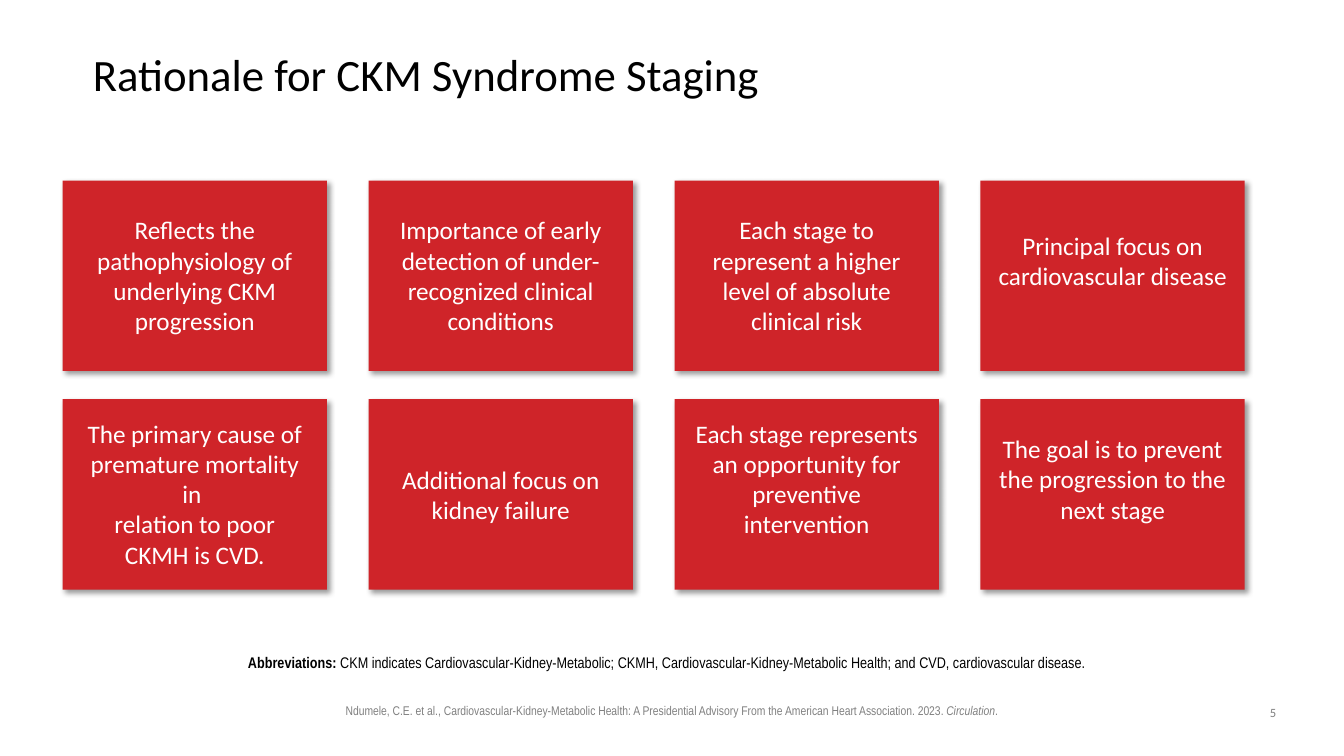
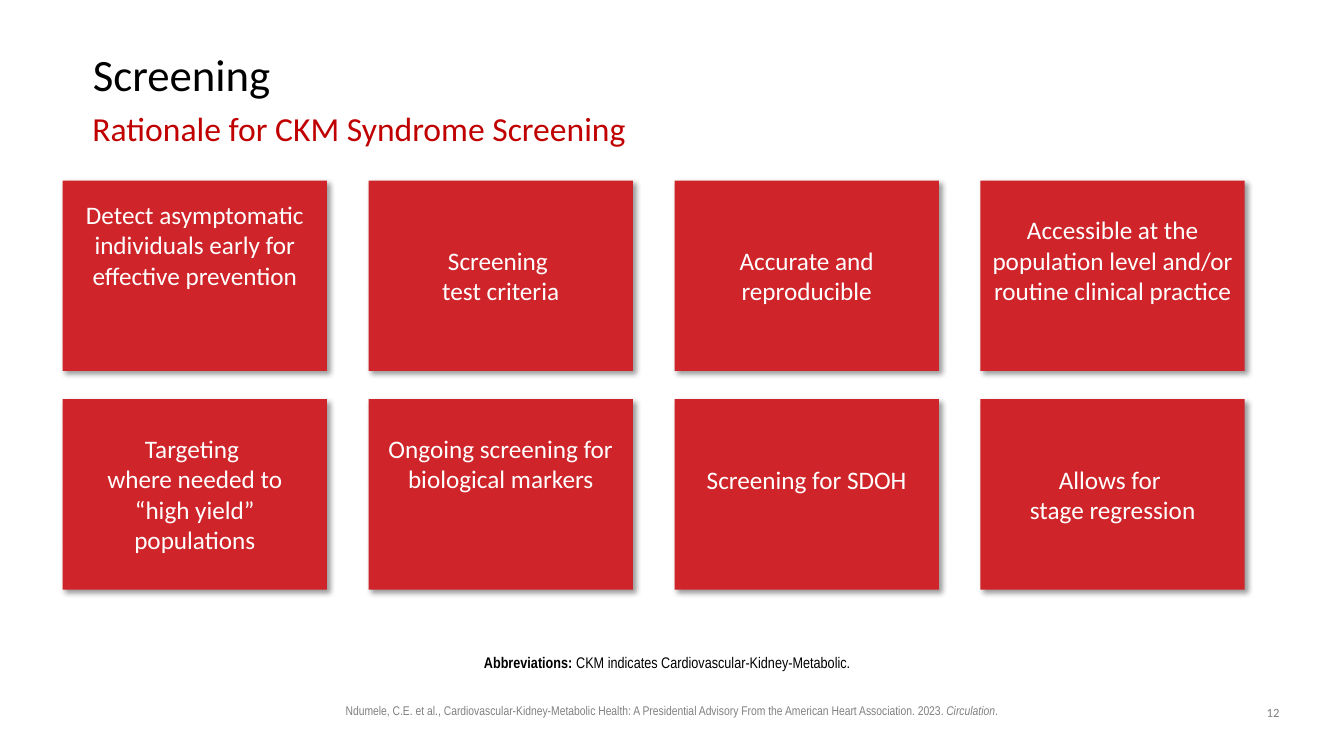
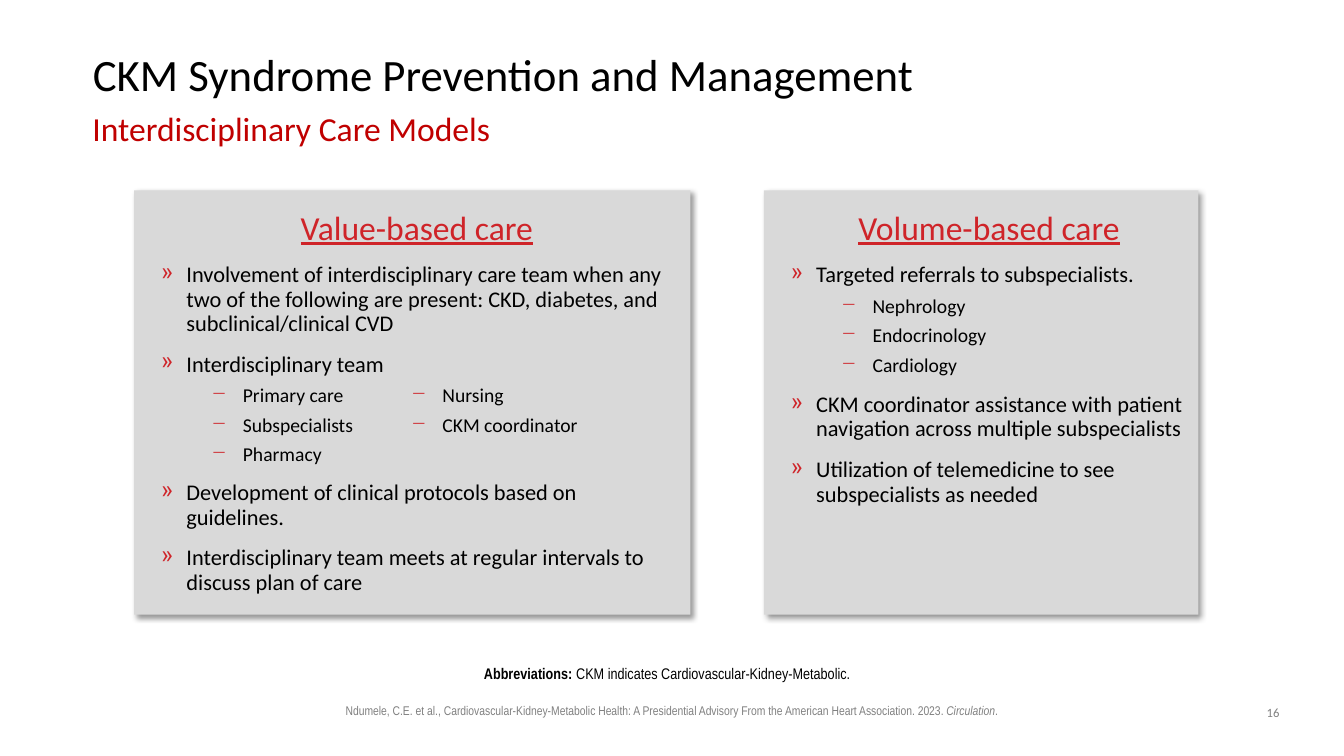
from dataclasses import dataclass

from lxml import etree
from pptx import Presentation
from pptx import util as u
from pptx.dml.color import RGBColor
from pptx.enum import shapes, text
from pptx.oxml import ns

Cm, Pt = u.Cm, u.Pt
CENTER = text.PP_ALIGN.CENTER


@dataclass(frozen=True)
class Theme:
    red: str = "CF2429"
    deep_red: str = "C00000"
    panel: str = "D9D9D9"
    black: str = "000000"
    white: str = "FFFFFF"
    grey: str = "808080"
    body: str = "Calibri"
    narrow: str = "Arial Narrow"
    title: int = 32
    heading: int = 24
    card: int = 18
    bullet: int = 16
    dash: int = 14
    note: int = 11
    small: int = 9


T = Theme()


def style(size, color, name=T.body, **extra):
    return {"size": Pt(size), "name": name, "color": color, **extra}


TITLE = style(T.title, T.black)
SUBTITLE = style(T.heading, T.deep_red)
CARD = style(T.card, T.white)
HEADING = style(T.heading, T.red, underline=True)
BULLET = style(T.bullet, T.black)
DASH = style(T.dash, T.black)
NOTE = style(T.note, T.black, T.narrow)
CITATION = style(T.small, T.grey, T.narrow)
NUMBER = style(T.small, T.grey)

KINDS = {
    "heading": (HEADING, None, {"alignment": CENTER}),
    "bullet": (BULLET, ("»", 0.64, -0.64), {"line_spacing": 0.9}),
    "dash": (DASH, ("−", 2.06, -0.79), {"level": 1, "line_spacing": 0.9}),
}


def set_all(obj, values):
    for key, value in values.items():
        setattr(obj, key, value)


def write(p, content, fmt, **extra):
    for i, part in enumerate(content.split("\n")):
        if i:
            p.add_line_break()
        r = p.add_run()
        r.text = part
        for key, value in {**fmt, **extra}.items():
            if key == "color":
                r.font.color.rgb = RGBColor.from_string(value)
            else:
                setattr(r.font, key, value)


def add_frame(s, box, **frame):
    tf = s.shapes.add_textbox(*map(Cm, box)).text_frame
    set_all(tf, {"word_wrap": True, **frame})
    return tf


def add_text(s, box, runs, para, **frame):
    p = add_frame(s, box, **frame).paragraphs[0]
    set_all(p, para)
    for content, fmt, extra in runs:
        write(p, content, fmt, **extra)


def add_block(s, box, color):
    sp = s.shapes.add_shape(shapes.MSO_SHAPE.RECTANGLE, *map(Cm, box))
    sp.shadow.inherit = False
    sp.fill.solid()
    sp.fill.fore_color.rgb = RGBColor.from_string(color)
    sp.line.fill.background()
    effects = sp._element.spPr.find(ns.qn("a:effectLst"))
    shadow = etree.SubElement(effects, ns.qn("a:outerShdw"), blurRad=str(Pt(4)),
                              dist=str(Pt(3)), dir="2700000", algn="tl", rotWithShape="0")
    rgb = etree.SubElement(shadow, ns.qn("a:srgbClr"), val=T.black)
    etree.SubElement(rgb, ns.qn("a:alpha"), val="40000")


def add_bullet(p, char, margin, indent):
    pPr = p._p.get_or_add_pPr()
    pPr.set("marL", str(Cm(margin)))
    pPr.set("indent", str(Cm(indent)))
    color = etree.SubElement(pPr, ns.qn("a:buClr"))
    etree.SubElement(color, ns.qn("a:srgbClr"), val=T.red)
    etree.SubElement(pPr, ns.qn("a:buChar"), char=char)


def add_list(s, box, items):
    tf = add_frame(s, box)
    for i, (kind, after, content) in enumerate(items):
        p = tf.add_paragraph() if i else tf.paragraphs[0]
        fmt, bullet, para = KINDS[kind]
        if bullet:
            add_bullet(p, *bullet)
        set_all(p, {**para, "space_after": Pt(after)})
        write(p, content, fmt)


def new_slide(prs, number, title, subtitle, note, note_top=16.38):
    s = prs.slides.add_slide(prs.slide_layouts[6])
    add_text(s, (7.62, 17.6, 18.62, 1.02), [
        ("Ndumele, C.E. et al., Cardiovascular-Kidney-Metabolic Health: A Presidential "
         "Advisory From the American Heart Association. 2023. ", CITATION, {}),
        ("Circulation", CITATION, {"italic": True}),
        (".", CITATION, {})], {"alignment": CENTER})
    add_text(s, (2.34, 1.02, 29.21, 1.83), [(title, TITLE, {})], {"line_spacing": 0.9},
             vertical_anchor=text.MSO_ANCHOR.MIDDLE, margin_left=0, margin_right=0,
             margin_top=0, margin_bottom=0)
    if subtitle:
        add_text(s, (2.08, 2.72, 29.21, 1.24), [(subtitle, SUBTITLE, {})],
                 {"line_spacing": 0.9})
    add_text(s, (2.34, note_top, 29.21, 0.8),
             [("Abbreviations: ", NOTE, {"bold": True}), (note, NOTE, {})],
             {"alignment": CENTER, "line_spacing": 0.9}, margin_left=0)
    add_text(s, (31.55, 17.65, 1.07, 0.66), [(number, NUMBER, {})], {"alignment": CENTER})
    return s


def add_card(s, box, content, lines, text_w):
    x, y, w, h = box
    text_h = 0.77 * lines + 0.25
    add_block(s, box, T.red)
    add_text(s, (x + (w - text_w) / 2, y + (h - text_h) / 2, text_w, text_h),
             [(content, CARD, {})], {"alignment": CENTER})


def add_cards(s, cards, left=1.58, top=4.55, cols=4):
    for i, (lines, content) in enumerate(cards):
        row, col = divmod(i, cols)
        text_w = 6.78 if col == cols - 1 else 6.27
        add_card(s, (left + col * 7.71, top + row * 5.51, 6.66, 4.8), content, lines, text_w)


def add_panel(s, box, lists):
    x, y, w, h = box
    add_block(s, box, T.panel)
    for dx, dy, width, height, items in lists:
        add_list(s, (x + dx, y + dy, width, height), items)


STAGING = [
    (4, "Reflects the pathophysiology of underlying CKM progression"),
    (4, "Importance of early detection of under-recognized clinical conditions"),
    (4, "Each stage to represent a higher level of absolute clinical risk"),
    (3, "Principal focus on cardiovascular disease"),
    (5, "The primary cause of premature mortality in \nrelation to poor CKMH is CVD."),
    (2, "Additional focus on kidney failure"),
    (5, "Each stage represents an opportunity for preventive intervention"),
    (4, "The goal is to prevent the progression to the next stage"),
]

SCREENING = [
    (5, "Detect asymptomatic individuals early for effective prevention"),
    (2, "Screening \ntest criteria"),
    (2, "Accurate and reproducible"),
    (4, "Accessible at the population level and/or routine clinical practice"),
    (4, "Targeting \nwhere needed to “high yield” populations"),
    (4, "Ongoing screening for biological markers"),
    (2, "Screening for SDOH"),
    (2, "Allows for \nstage regression"),
]

VALUE_CARE = [
    (0.43, 0.28, 13.39, 6.86, [
        ("heading", 12, "Value-based care"),
        ("bullet", 12, "Involvement of interdisciplinary care team when any two of the "
                       "following are present: CKD, diabetes, and subclinical/clinical CVD"),
        ("bullet", 6, "Interdisciplinary team"),
        ("dash", 6, "Primary care"),
        ("dash", 6, "Subspecialists"),
        ("dash", 12, "Pharmacy")]),
    (5.46, 4.8, 7.57, 1.55, [
        ("dash", 6, "Nursing"),
        ("dash", 12, "CKM coordinator")]),
    (0.43, 7.21, 13.16, 3.15, [
        ("bullet", 12, "Development of clinical protocols based on guidelines."),
        ("bullet", 12, "Interdisciplinary team meets at regular intervals to discuss "
                       "plan of care")]),
]

VOLUME_CARE = [
    (0.43, 0.28, 10.49, 8.51, [
        ("heading", 12, "Volume-based care"),
        ("bullet", 6, "Targeted referrals to subspecialists."),
        ("dash", 6, "Nephrology"),
        ("dash", 6, "Endocrinology"),
        ("dash", 12, "Cardiology"),
        ("bullet", 12, "CKM coordinator assistance with patient navigation across "
                       "multiple subspecialists"),
        ("bullet", 12, "Utilization of telemedicine to see subspecialists as needed")]),
]


def main():
    prs = Presentation()
    prs.slide_width, prs.slide_height = Cm(33.87), Cm(19.05)
    ckm = "CKM indicates Cardiovascular-Kidney-Metabolic"

    s = new_slide(prs, "5", "Rationale for CKM Syndrome Staging", None,
                  ckm + "; CKMH, Cardiovascular-Kidney-Metabolic Health; "
                  "and CVD, cardiovascular disease.")
    add_cards(s, STAGING)

    s = new_slide(prs, "12", "Screening", "Rationale for CKM Syndrome Screening", ckm + ".")
    add_cards(s, SCREENING)

    s = new_slide(prs, "16", "CKM Syndrome Prevention and Management",
                  "Interdisciplinary Care Models", ckm + ".", note_top=16.66)
    add_panel(s, (3.38, 4.8, 14.02, 10.69), VALUE_CARE)
    add_panel(s, (19.25, 4.8, 10.95, 10.69), VOLUME_CARE)

    prs.save("out.pptx")


if __name__ == "__main__":
    main()
